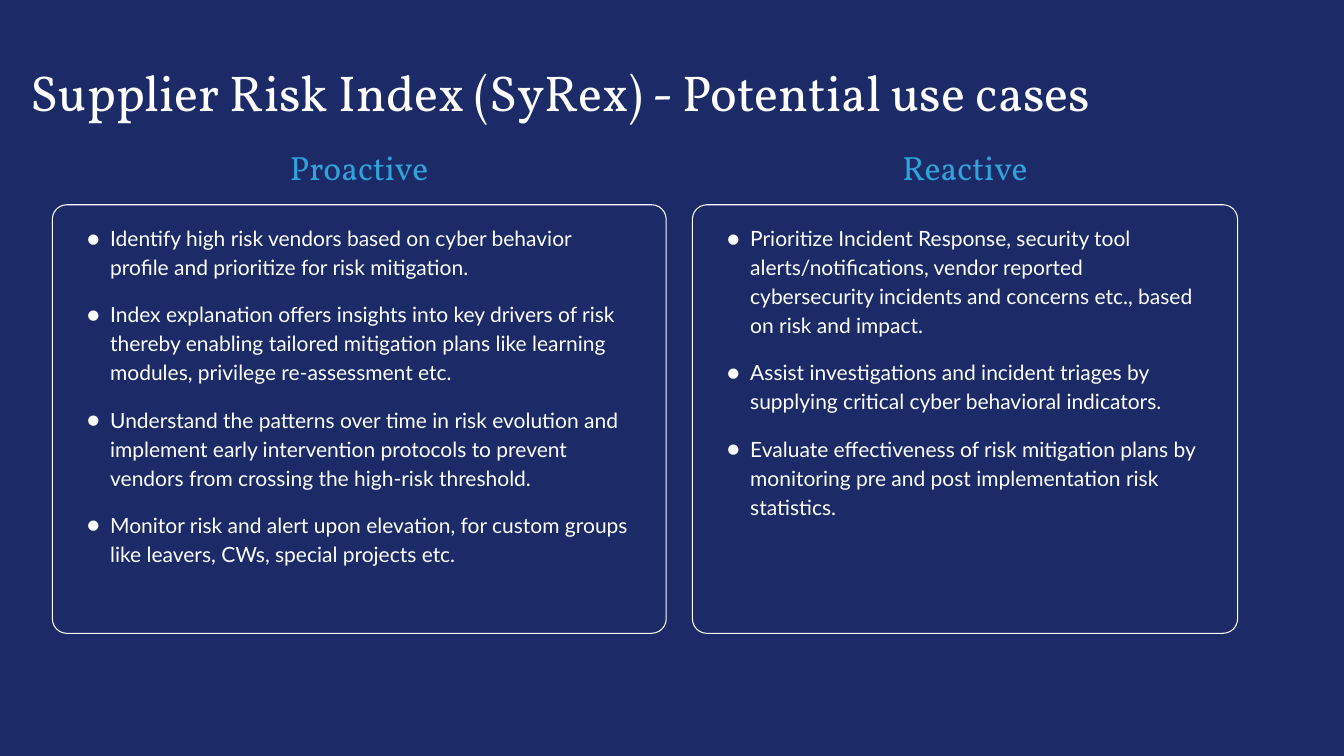
"""Build the slide on potential use cases of the Supplier Risk Index."""
from dataclasses import dataclass

from lxml import etree
from pptx import Presentation
from pptx.dml.color import RGBColor
from pptx.enum.shapes import MSO_SHAPE
from pptx.enum.text import MSO_ANCHOR, PP_ALIGN
from pptx.oxml.ns import qn
from pptx.slide import Slide
from pptx.text.text import TextFrame, _Paragraph
from pptx.util import Cm, Pt

ROUNDED = MSO_SHAPE.ROUNDED_RECTANGLE
TOP, MIDDLE = MSO_ANCHOR.TOP, MSO_ANCHOR.MIDDLE
LEFT, CENTER = PP_ALIGN.LEFT, PP_ALIGN.CENTER

NAVY, WHITE, SKY = "1C2B68", "FFFFFF", "30A3DA"
SERIF, SANS = "Vollkorn", "Lato"
HEADING_TOP, HEADING_WIDTH, HEADING_HEIGHT = 3.38, 9.88, 1.7
PANEL_TOP, PANEL_HEIGHT = 5.16, 10.8
USE_CASE_GAP = Pt(13)


@dataclass(frozen=True)
class Approach:
    heading: str
    heading_left: float
    panel_left: float
    panel_width: float
    use_cases: tuple[str, ...]


APPROACHES = (
    Approach("Proactive", 4.11, 1.32, 15.47, (
        "Identify high risk vendors based on cyber behavior profile and "
        "prioritize for risk mitigation.",
        "Index explanation offers insights into key drivers of risk thereby "
        "enabling tailored mitigation plans like learning modules, privilege "
        "re-assessment etc.",
        "Understand the patterns over time in risk evolution and implement "
        "early intervention protocols to prevent vendors from crossing the "
        "high-risk threshold.",
        "Monitor risk and alert upon elevation, for custom groups like "
        "leavers, CWs, special projects etc.",
    )),
    Approach("Reactive", 19.38, 17.45, 13.74, (
        "Prioritize Incident Response, security tool alerts/notifications, "
        "vendor reported cybersecurity incidents and concerns etc., based on "
        "risk and impact.",
        "Assist investigations and incident triages by supplying critical "
        "cyber behavioral indicators.",
        "Evaluate effectiveness of risk mitigation plans by monitoring pre "
        "and post implementation risk statistics.",
    )),
)


def color(value: str) -> RGBColor:
    return RGBColor.from_string(value)


def set_frame(frame: TextFrame, side: float, edge: float, anchor: MSO_ANCHOR) -> None:
    frame.word_wrap = True
    frame.vertical_anchor = anchor
    frame.margin_left = frame.margin_right = Cm(side)
    frame.margin_top = frame.margin_bottom = Cm(edge)


def set_font(paragraph: _Paragraph, name: str, size: float, value: str) -> None:
    paragraph.font.name = name
    paragraph.font.size = Pt(size)
    paragraph.font.color.rgb = color(value)


def add_bullet(paragraph: _Paragraph) -> None:
    properties = paragraph._p.get_or_add_pPr()
    properties.set("marL", str(Cm(0.66)))
    properties.set("indent", str(Cm(-0.58)))
    bullet_color = etree.SubElement(properties, qn("a:buClr"))
    etree.SubElement(bullet_color, qn("a:srgbClr"), val=WHITE)
    etree.SubElement(properties, qn("a:buFont"), typeface=SANS)
    etree.SubElement(properties, qn("a:buChar"), char="●")


def add_title(slide: Slide, text: str) -> None:
    title = slide.shapes.add_textbox(Cm(0.53), Cm(0.56), Cm(29.21), Cm(3.68))
    set_frame(title.text_frame, 0.25, 0.13, MIDDLE)
    paragraph = title.text_frame.paragraphs[0]
    paragraph.text = text
    paragraph.line_spacing = 0.9
    set_font(paragraph, SERIF, 36, WHITE)


def add_panel(slide: Slide, approach: Approach) -> None:
    panel = slide.shapes.add_shape(
        ROUNDED, Cm(approach.panel_left), Cm(PANEL_TOP),
        Cm(approach.panel_width), Cm(PANEL_HEIGHT))
    panel.adjustments[0] = 0.034
    panel.shadow.inherit = False
    panel.fill.background()
    panel.line.color.rgb = color(WHITE)
    panel.line.width = Pt(0.75)
    frame = panel.text_frame
    set_frame(frame, 0.69, 0.33, TOP)
    for index, use_case in enumerate(approach.use_cases):
        paragraph = frame.add_paragraph() if index else frame.paragraphs[0]
        paragraph.text = use_case
        add_bullet(paragraph)
        paragraph.alignment = LEFT
        paragraph.line_spacing = 1.15
        paragraph.space_before = USE_CASE_GAP if index else Pt(0)
        set_font(paragraph, SANS, 15, WHITE)


def add_heading(slide: Slide, approach: Approach) -> None:
    heading = slide.shapes.add_textbox(
        Cm(approach.heading_left), Cm(HEADING_TOP),
        Cm(HEADING_WIDTH), Cm(HEADING_HEIGHT))
    set_frame(heading.text_frame, 0.33, 0.33, TOP)
    paragraph = heading.text_frame.paragraphs[0]
    paragraph.text = approach.heading
    paragraph.alignment = CENTER
    set_font(paragraph, SERIF, 24, SKY)


def main() -> None:
    presentation = Presentation()
    presentation.slide_width, presentation.slide_height = Cm(33.87), Cm(19.05)
    slide = presentation.slides.add_slide(presentation.slide_layouts[6])
    slide.background.fill.solid()
    slide.background.fill.fore_color.rgb = color(NAVY)
    add_title(slide, "Supplier Risk Index (SyRex) - Potential use cases")
    for approach in APPROACHES:
        add_panel(slide, approach)
        add_heading(slide, approach)
    presentation.save("out.pptx")


if __name__ == "__main__":
    main()
